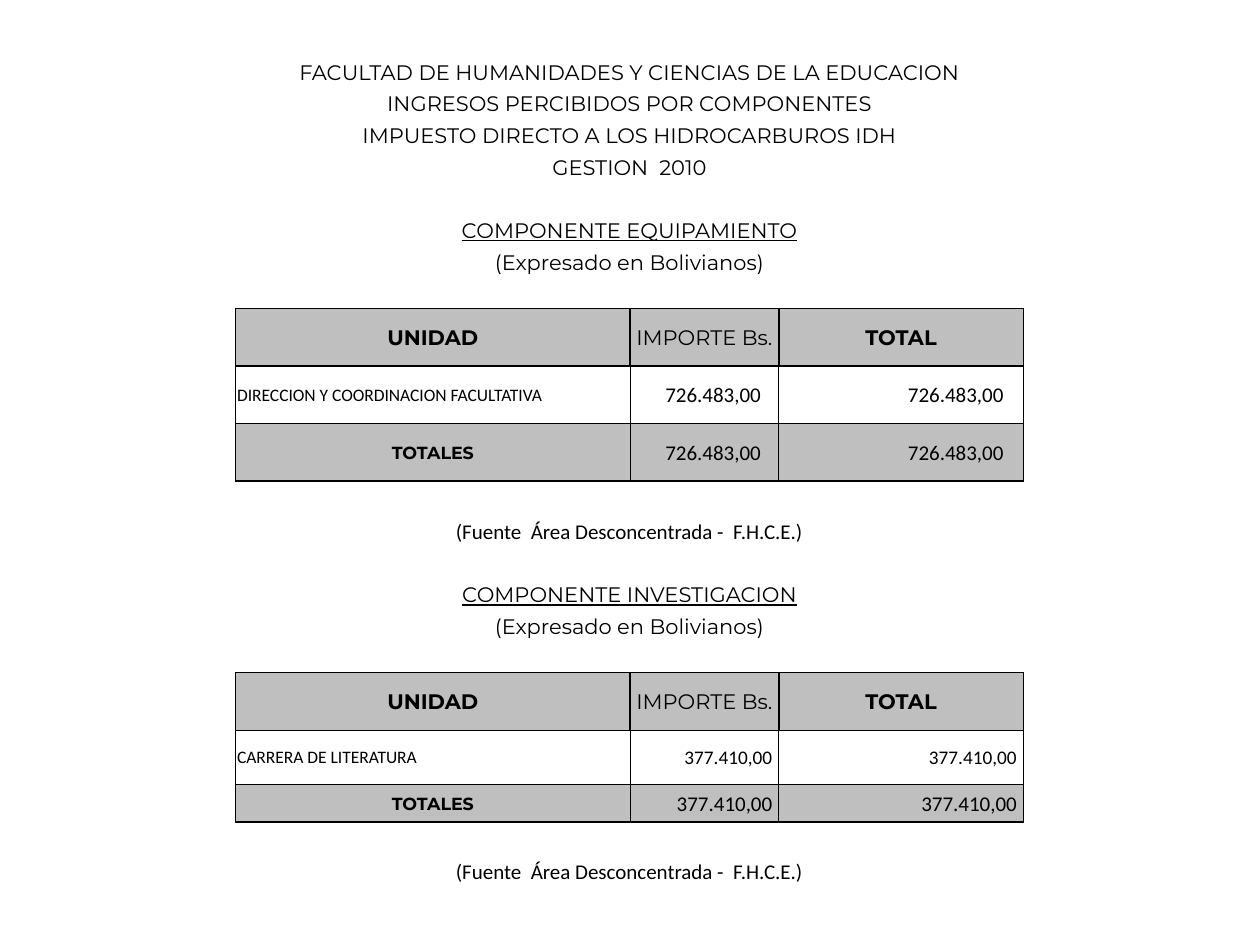
from dataclasses import dataclass

from lxml.etree import SubElement
from pptx import Presentation
from pptx.dml.color import RGBColor
from pptx.enum.text import MSO_ANCHOR, PP_ALIGN
from pptx.oxml.ns import qn
from pptx.table import Table, _Cell
from pptx.util import Cm, Pt

COLORS = {"ink": "000000", "band": "BFBFBF"}
HEADING_FONT, FIGURE_FONT = "Montserrat", "Calibri"
NO_STYLE = "{2D5ABB26-0587-4C30-8999-92F81FD0307C}"
THICK, THIN = 1, 0.5
INSET = 0.03
LINE, SPACER, BAND = 0.64, 0.66, 1.16
COLUMN_WIDTHS = [7.95, 3, 4.93]
LEAD = [BAND] + [LINE] * 4
FACULTY_LINES = [
    "FACULTAD DE HUMANIDADES Y CIENCIAS DE LA EDUCACION",
    "INGRESOS PERCIBIDOS POR COMPONENTES",
    "IMPUESTO DIRECTO A LOS HIDROCARBUROS IDH",
    "GESTION  2010",
]
HEADERS = [("UNIDAD", True), ("IMPORTE Bs.", False), ("TOTAL", True)]
CURRENCY = "(Expresado en Bolivianos)"
SOURCE = "(Fuente  Área Desconcentrada -  F.H.C.E.)"


@dataclass(frozen=True)
class Style:
    size: int = 12
    font: str = HEADING_FONT
    bold: bool = False
    underline: bool = False
    align: PP_ALIGN = PP_ALIGN.CENTER
    anchor: MSO_ANCHOR = MSO_ANCHOR.MIDDLE
    right_inset: float = INSET


@dataclass(frozen=True)
class Component:
    title: str
    unit: str
    amount: str
    amount_size: int
    header_rule: float
    right_insets: tuple[float, float]
    band_heights: tuple[float, float, float]


COMPONENTS = [
    Component("COMPONENTE EQUIPAMIENTO", "DIRECCION Y COORDINACION FACULTATIVA",
              "726.483,00", 12, THICK, (0.36, 0.4), (BAND, BAND, BAND)),
    Component("COMPONENTE INVESTIGACION", "CARRERA DE LITERATURA",
              "377.410,00", 11, THIN, (0.13, 0.13), (BAND, 1.09, 0.76)),
]


def write(cell: _Cell, text: str, style: Style) -> None:
    """Write one styled run into a cell."""
    cell.vertical_anchor = style.anchor
    cell.margin_right = Cm(style.right_inset)
    paragraph = cell.text_frame.paragraphs[0]
    paragraph.alignment = style.align
    run = paragraph.add_run()
    run.text = text
    run.font.size = Pt(style.size)
    run.font.name = style.font
    run.font.bold = style.bold
    run.font.underline = style.underline
    run.font.color.rgb = RGBColor.from_string(COLORS["ink"])


def write_line(table: Table, row: int, text: str, style: Style) -> None:
    """Merge a whole row and write a centred line in it."""
    table.cell(row, 0).merge(table.cell(row, len(COLUMN_WIDTHS) - 1))
    write(table.cell(row, 0), text, style)


def set_borders(cell: _Cell, left: float, right: float, top: float, bottom: float) -> None:
    """Draw the four borders of a cell with widths in points."""
    properties = cell._tc.get_or_add_tcPr()
    for side, width in zip("LRTB", (left, right, top, bottom)):
        line = SubElement(properties, qn(f"a:ln{side}"), w=str(Pt(width)))
        fill = SubElement(line, qn("a:solidFill"))
        SubElement(fill, qn("a:srgbClr"), val=COLORS["ink"])


def frame_band(table: Table, row: int, top: float, bottom: float, header: bool, shaded: bool) -> None:
    """Frame and shade one band of a component."""
    last = len(COLUMN_WIDTHS) - 1
    for column in range(last + 1):
        cell = table.cell(row, column)
        left = THICK if header or column == 0 else THIN
        right = THICK if header or column == last else THIN
        set_borders(cell, left, right, top, bottom)
        if shaded:
            cell.fill.solid()
            cell.fill.fore_color.rgb = RGBColor.from_string(COLORS["band"])


def add_component(table: Table, row: int, component: Component) -> None:
    """Write a component from its title to its source line."""
    caption = Style(anchor=MSO_ANCHOR.BOTTOM)
    write_line(table, row, component.title, Style(underline=True, anchor=MSO_ANCHOR.BOTTOM))
    write_line(table, row + 1, CURRENCY, caption)
    header, body, totals = row + 3, row + 4, row + 5
    frame_band(table, header, THICK, component.header_rule, True, True)
    frame_band(table, body, component.header_rule, THIN, False, False)
    frame_band(table, totals, THIN, THICK, False, True)
    for column, (label, bold) in enumerate(HEADERS):
        write(table.cell(header, column), label, Style(bold=bold))
    write(table.cell(body, 0), component.unit, Style(10, FIGURE_FONT, align=PP_ALIGN.LEFT))
    write(table.cell(totals, 0), "TOTALES", Style(10, bold=True))
    for band, size in ((body, component.amount_size), (totals, 12)):
        for column, inset in enumerate(component.right_insets, 1):
            figure = Style(size, FIGURE_FONT, align=PP_ALIGN.RIGHT, right_inset=inset)
            write(table.cell(band, column), component.amount, figure)
    write_line(table, row + 7, SOURCE, Style(font=FIGURE_FONT, anchor=MSO_ANCHOR.BOTTOM))


def prepare_cell(cell: _Cell) -> None:
    """Tighten the margins and the empty line height of a cell."""
    cell.margin_left = cell.margin_right = cell.margin_top = Cm(INSET)
    cell.margin_bottom = 0
    SubElement(cell.text_frame.paragraphs[0]._p, qn("a:endParaRPr"), sz="1000")


def main() -> None:
    """Build the income slide."""
    deck = Presentation()
    deck.slide_width, deck.slide_height = Cm(25.4), Cm(19.05)
    slide = deck.slides.add_slide(deck.slide_layouts[6])
    heights = list(LEAD)
    starts = []
    for component in COMPONENTS:
        starts.append(len(heights))
        heights += [LINE, LINE, SPACER, *component.band_heights, LINE, LINE, LINE]
    income = slide.shapes.add_table(
        len(heights), len(COLUMN_WIDTHS), Cm(4.75), Cm(0.56),
        Cm(sum(COLUMN_WIDTHS)), Cm(sum(heights))).table
    income.first_row = income.horz_banding = False
    income._tbl.tblPr.find(qn("a:tableStyleId")).text = NO_STYLE
    for column, width in zip(income.columns, COLUMN_WIDTHS):
        column.width = Cm(width)
    for row, height in zip(income.rows, heights):
        row.height = Cm(height)
    for cell in income.iter_cells():
        prepare_cell(cell)
    for row, line in enumerate(FACULTY_LINES):
        write_line(income, row, line, Style(anchor=MSO_ANCHOR.BOTTOM))
    for start, component in zip(starts, COMPONENTS):
        add_component(income, start, component)
    deck.save("out.pptx")


if __name__ == "__main__":
    main()
